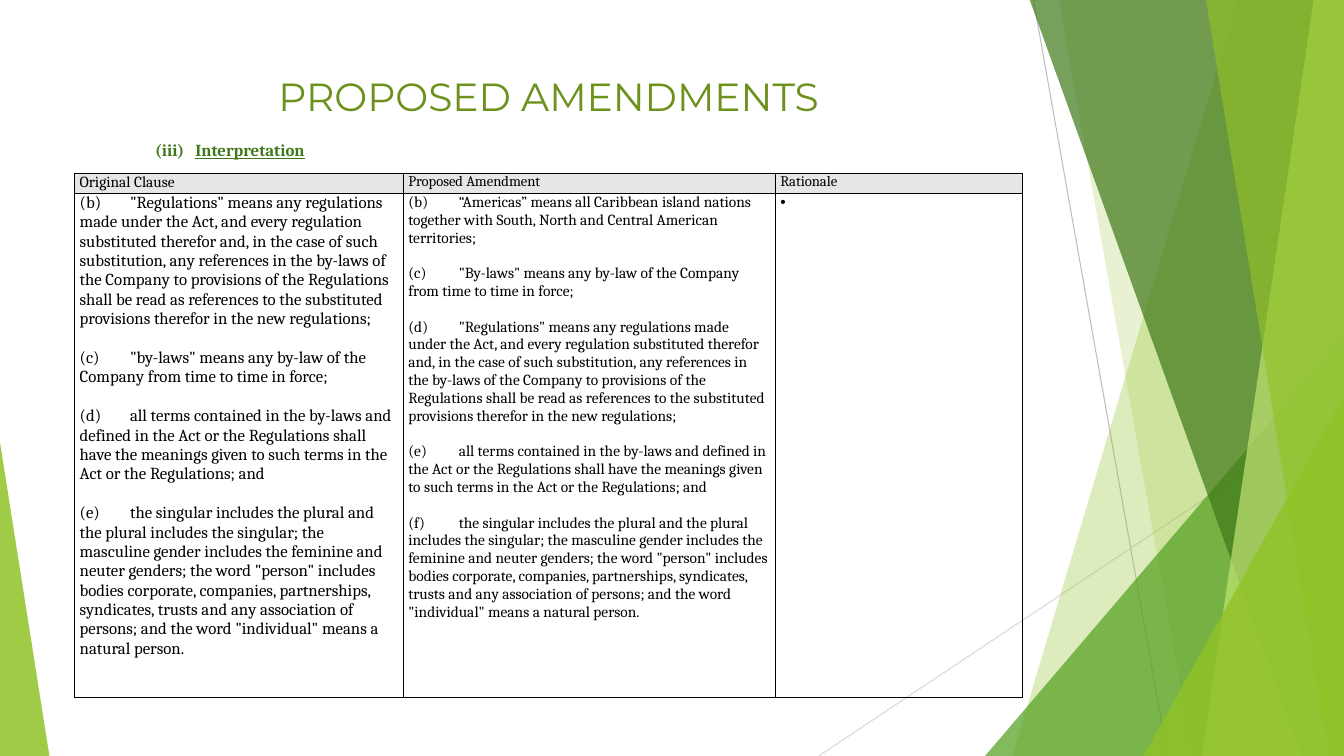
from dataclasses import dataclass

from lxml import etree
from pptx import Presentation
from pptx.dml.color import RGBColor
from pptx.enum.shapes import MSO_CONNECTOR, MSO_SHAPE
from pptx.enum.text import MSO_ANCHOR, PP_ALIGN
from pptx.oxml.ns import qn
from pptx.util import Pt

PX = 9144  # 100 px to the inch
WIDTH, HEIGHT = 1333, 750
STRAIGHT = MSO_CONNECTOR.STRAIGHT
TRIANGLE = MSO_SHAPE.ISOSCELES_TRIANGLE
CENTER, LEFT = PP_ALIGN.CENTER, PP_ALIGN.LEFT
TOP, MIDDLE = MSO_ANCHOR.TOP, MSO_ANCHOR.MIDDLE

BLACK, HEADER_GREY = "000000", "E7E6E6"
LIME, GREEN, FOREST, PALE = "90C226", "54A021", "3F7819", "C0E474"
TITLE_GREEN = "6C921D"
SERIF, SANS = "Cambria", "Montserrat"
TAB_STOP = 50


@dataclass
class Ray:
    start: tuple[int, int]
    end: tuple[int, int]
    color: str


@dataclass
class Band:
    """Panel reaching the right edge, with a slanted left side."""
    top_x: int
    bottom_x: int
    color: str
    opacity: int


@dataclass
class Wedge:
    left: int
    top: int
    width: int
    apex: int
    color: str
    opacity: int


@dataclass
class Column:
    width: int
    heading: str
    heading_size: float
    clauses: list[str]
    size: float
    gap: float


RAYS = [
    Ray((1025, 0), (1158, HEIGHT), "BFBFBF"),
    Ray((WIDTH, 403), (812, HEIGHT), "D9D9D9"),
]
DECOR = [
    Band(1228, 1004, LIME, 30),
    Band(1050, 1183, LIME, 20),
    Wedge(977, 333, 356, 1, GREEN, 72),
    Band(1021, 1291, FOREST, 70),
    Band(1303, 1192, PALE, 70),
    Band(1196, 1318, LIME, 65),
    Wedge(1134, 393, 199, 1, LIME, 80),
    Wedge(0, 439, 49, 0, LIME, 85),
]

REGULATIONS = (
    '"Regulations" means any regulations made under the Act, and every regulation '
    "substituted therefor and, in the case of such substitution, any references in the "
    "by-laws of the Company to provisions of the Regulations shall be read as references "
    "to the substituted provisions therefor in the new regulations;"
)
BY_LAWS = "means any by-law of the Company from time to time in force;"
TERMS = (
    "all terms contained in the by-laws and defined in the Act or the Regulations shall "
    "have the meanings given to such terms in the Act or the Regulations; and"
)
SINGULAR = (
    "the singular includes the plural and the plural includes the singular; the masculine "
    "gender includes the feminine and neuter genders; the word \"person\" includes bodies "
    "corporate, companies, partnerships, syndicates, trusts and any association of persons; "
    'and the word "individual" means a natural person.'
)
AMERICAS = (
    "“Americas” means all Caribbean island nations together with South, North and "
    "Central American territories;"
)
COLUMNS = [
    Column(326, "Original Clause", 11,
           [REGULATIONS, f'"by-laws" {BY_LAWS}', TERMS, SINGULAR], 12, 14),
    Column(369, "Proposed Amendment", 10.5,
           [AMERICAS, f'"By-laws" {BY_LAWS}', REGULATIONS, TERMS, SINGULAR], 11, 12.7),
    Column(245, "Rationale", 10.5, [], 11, 0),
]
ROW_HEIGHTS = [20, 500]


def rgb(color: str) -> RGBColor:
    return RGBColor.from_string(color)


def paint(shape, color: str, opacity: int) -> None:
    shape.shadow.inherit = False
    shape.line.fill.background()
    shape.fill.solid()
    shape.fill.fore_color.rgb = rgb(color)
    tint = shape.fill._xPr.find(qn("a:solidFill"))[0]
    etree.SubElement(tint, qn("a:alpha"), val=str(opacity * 1000))


def add_ray(page, ray: Ray) -> None:
    points = [value * PX for value in (*ray.start, *ray.end)]
    line = page.shapes.add_connector(STRAIGHT, *points)
    line.line.color.rgb = rgb(ray.color)
    line.line.width = Pt(0.75)
    etree.SubElement(line._element.spPr, qn("a:effectLst"))


def add_band(page, band: Band) -> None:
    builder = page.shapes.build_freeform(band.top_x, -1, scale=PX)
    builder.add_line_segments([(WIDTH, -1), (WIDTH, HEIGHT), (band.bottom_x, HEIGHT)])
    paint(builder.convert_to_shape(), band.color, band.opacity)


def add_wedge(page, wedge: Wedge) -> None:
    shape = page.shapes.add_shape(
        TRIANGLE, wedge.left * PX, wedge.top * PX,
        wedge.width * PX, (HEIGHT - wedge.top) * PX)
    shape.adjustments[0] = wedge.apex
    paint(shape, wedge.color, wedge.opacity)


def add_span(para, text: str, size: float, color: str = BLACK, font: str = SERIF,
             bold: bool = False, underline: bool = False) -> None:
    span = para.add_run()
    span.text = text
    span.font.size = Pt(size)
    span.font.name = font
    span.font.color.rgb = rgb(color)
    span.font.bold = bold
    span.font.underline = underline


def set_tab(para, position: int) -> None:
    tabs = etree.SubElement(para._p.get_or_add_pPr(), qn("a:tabLst"))
    etree.SubElement(tabs, qn("a:tab"), pos=str(position * PX), algn="l")


def add_text_box(page, left: int, top: int, width: int, height: int, anchor, align):
    """Add a wrapping text box and return its first paragraph."""
    box = page.shapes.add_textbox(left * PX, top * PX, width * PX, height * PX)
    box.text_frame.word_wrap = True
    box.text_frame.vertical_anchor = anchor
    para = box.text_frame.paragraphs[0]
    para.alignment = align
    return para


def style_cell(cell) -> None:
    cell.margin_left = cell.margin_right = 5 * PX
    cell.margin_top = cell.margin_bottom = 0
    properties = cell._tc.get_or_add_tcPr()
    for side in ("a:lnL", "a:lnR", "a:lnT", "a:lnB"):
        border = etree.SubElement(properties, qn(side), w=str(Pt(1)))
        solid = etree.SubElement(border, qn("a:solidFill"))
        etree.SubElement(solid, qn("a:srgbClr"), val=BLACK)
    cell.fill.background()


def fill_clauses(cell, column: Column) -> None:
    frame = cell.text_frame
    for index, clause in enumerate(column.clauses):
        para = frame.add_paragraph() if index else frame.paragraphs[0]
        para.space_before = Pt(column.gap if index else 0)
        set_tab(para, TAB_STOP)
        add_span(para, f"({'bcdef'[index]})\t{clause}", column.size)


def add_empty_bullet(cell, size: float) -> None:
    para = cell.text_frame.paragraphs[0]
    properties = para._p.get_or_add_pPr()
    properties.set("marL", str(17 * PX))
    properties.set("indent", str(-17 * PX))
    etree.SubElement(properties, qn("a:buFont"), typeface="Arial")
    etree.SubElement(properties, qn("a:buChar"), char="•")
    add_span(para, " ", size)


def add_clause_table(page) -> None:
    width = sum(column.width for column in COLUMNS)
    table = page.shapes.add_table(
        len(ROW_HEIGHTS), len(COLUMNS), 74 * PX, 172 * PX,
        width * PX, sum(ROW_HEIGHTS) * PX).table
    table.first_row = table.horz_banding = False
    for row, height in zip(table.rows, ROW_HEIGHTS):
        row.height = height * PX
    for index, column in enumerate(COLUMNS):
        table.columns[index].width = column.width * PX
        heading, body = table.cell(0, index), table.cell(1, index)
        style_cell(heading)
        style_cell(body)
        heading.fill.solid()
        heading.fill.fore_color.rgb = rgb(HEADER_GREY)
        add_span(heading.text_frame.paragraphs[0], column.heading, column.heading_size)
        if column.clauses:
            fill_clauses(body, column)
        else:
            add_empty_bullet(body, column.size)


def main() -> None:
    deck = Presentation()
    deck.slide_width, deck.slide_height = WIDTH * PX, HEIGHT * PX
    page = deck.slides.add_slide(deck.slide_layouts[6])
    for ray in RAYS:
        add_ray(page, ray)
    for item in DECOR:
        if isinstance(item, Band):
            add_band(page, item)
        else:
            add_wedge(page, item)
    title = add_text_box(page, 74, 67, 940, 67, TOP, CENTER)
    add_span(title, "PROPOSED AMENDMENTS", 28, TITLE_GREEN, SANS)
    section = add_text_box(page, 144, 134, 552, 30, MIDDLE, LEFT)
    set_tab(section, 40)
    add_span(section, "(iii)\t", 12, FOREST, bold=True)
    add_span(section, "Interpretation", 12, FOREST, bold=True, underline=True)
    add_clause_table(page)
    deck.save("out.pptx")


if __name__ == "__main__":
    main()
